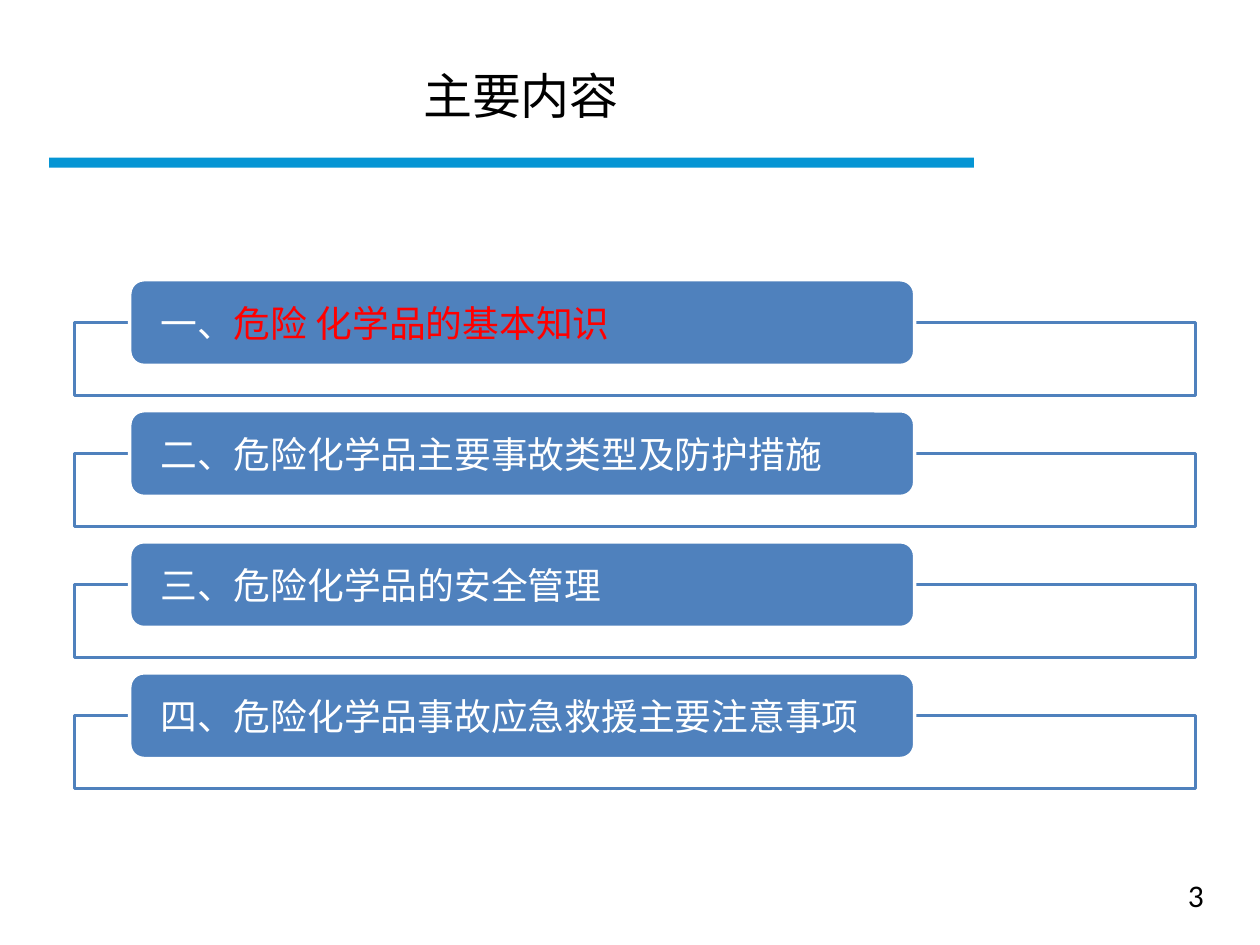
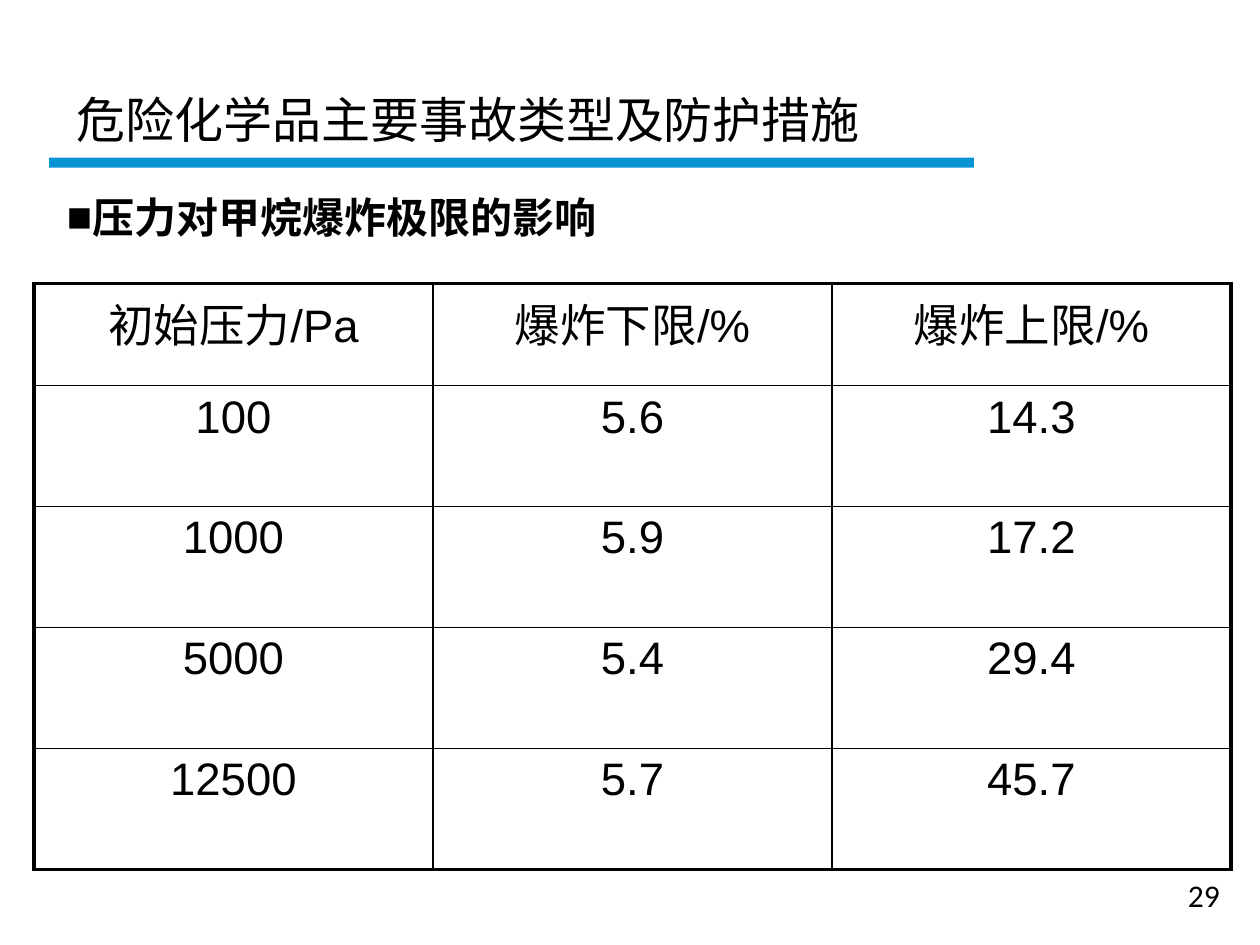
from dataclasses import dataclass

from lxml import etree
from pptx import Presentation
from pptx import util as u
from pptx.dml.color import RGBColor
from pptx.enum import shapes, text
from pptx.oxml.ns import qn


@dataclass(frozen=True)
class Theme:
    band: str = "0595D4"
    box: str = "4F81BD"
    highlight: str = "FF0000"
    ink: str = "000000"
    paper: str = "FFFFFF"
    cjk: str = "Noto Sans CJK SC"
    latin: str = "Calibri"
    table_font: str = "Arial"
    title_size: int = 28
    table_size: int = 26
    body_size: int = 24
    box_size: int = 21
    page_size: int = 18
    thin: float = 1
    thick: float = 2.25


T = Theme()

TOPICS = [
    ("一、", "危险 化学品的基本知识"),
    ("二、危险化学品主要事故类型及防护措施",),
    ("三、危险化学品的安全管理",),
    ("四、危险化学品事故应急救援主要注意事项",),
]
LIMITS = [
    ("初始压力/Pa", "爆炸下限/%", "爆炸上限/%"),
    ("100", "5.6", "14.3"),
    ("1000", "5.9", "17.2"),
    ("5000", "5.4", "29.4"),
    ("12500", "5.7", "45.7"),
]


def rgb(color):
    return RGBColor.from_string(color)


def format_run(r, size, font, color=T.ink, bold=False):
    r.font.size = u.Pt(size)
    r.font.name = font
    r.font.bold = bold
    r.font.color.rgb = rgb(color)
    etree.SubElement(r.font._element, qn("a:ea")).set("typeface", T.cjk)


def place(sp, left, top, width, height):
    sp.left, sp.top, sp.width, sp.height = map(u.Inches, (left, top, width, height))


def add_box(s, kind, at, fill, line=None):
    sp = s.shapes.add_shape(kind, *map(u.Inches, at))
    sp.shadow.inherit = False
    sp.fill.solid()
    sp.fill.fore_color.rgb = rgb(fill)
    if line:
        sp.line.color.rgb = rgb(line)
        sp.line.width = u.Pt(2)
    else:
        sp.line.fill.background()
    return sp


def add_slide(prs, layout, page):
    """Add a slide with the blue band and the page number."""
    s = prs.slides.add_slide(prs.slide_layouts[layout])
    add_box(s, shapes.MSO_SHAPE.RECTANGLE, (0.39, 1.25, 7.34, 0.08), T.band)
    tf = s.shapes.add_textbox(*map(u.Inches, (9.33, 6.9, 0.63, 0.4))).text_frame
    tf.word_wrap = True
    tf.text = str(page)
    format_run(tf.paragraphs[0].runs[0], T.page_size, T.latin)
    return s


def set_title(s, title, at, font, align, anchor):
    sp = s.shapes.title
    place(sp, *at)
    tf = sp.text_frame
    tf.text = title
    tf.vertical_anchor = anchor
    p = tf.paragraphs[0]
    p.alignment = align
    format_run(p.runs[0], T.title_size, font)


def set_bullet(s, line, at):
    sp = s.placeholders[1]
    place(sp, *at)
    sp.text_frame.text = line
    p = sp.text_frame.paragraphs[0]
    p.space_before = u.Pt(0)
    format_run(p.runs[0], T.body_size, T.cjk, bold=True)
    props = p._p.get_or_add_pPr()
    props.set("marL", "0")
    props.set("indent", "0")
    etree.SubElement(props, qn("a:buChar")).set("char", "■")


def add_topic(s, parts, top):
    """Add an outlined frame with a label on its upper edge; a second part is highlighted."""
    add_box(s, shapes.MSO_SHAPE.RECTANGLE, (0.59, top + 0.34, 8.9, 0.58), T.paper, T.box)
    label = add_box(s, shapes.MSO_SHAPE.ROUNDED_RECTANGLE,
                    (1.03, top, 6.23, 0.68), T.box, T.paper)
    tf = label.text_frame
    tf.word_wrap = True
    tf.vertical_anchor = text.MSO_ANCHOR.MIDDLE
    tf.margin_left = tf.margin_right = u.Inches(0.21)
    tf.margin_top = tf.margin_bottom = 0
    p = tf.paragraphs[0]
    p.alignment = text.PP_ALIGN.LEFT
    for part, color in zip(parts, (T.paper, T.highlight)):
        r = p.add_run()
        r.text = part
        format_run(r, T.box_size, T.latin, color)


def set_borders(cell, widths):
    """Draw the left, right, top and bottom borders in the given point widths."""
    props = cell._tc.get_or_add_tcPr()
    for side, width in zip("LRTB", widths):
        ln = etree.SubElement(props, qn(f"a:ln{side}"), w=str(u.Pt(width)))
        fill = etree.SubElement(ln, qn("a:solidFill"))
        etree.SubElement(fill, qn("a:srgbClr"), val=T.ink)


def add_limits_table(s, rows, at, header_height, row_height):
    last_row, last_col = len(rows) - 1, len(rows[0]) - 1
    table = s.shapes.add_table(len(rows), len(rows[0]), *map(u.Inches, at)).table
    table.first_row = table.horz_banding = False
    for i, values in enumerate(rows):
        table.rows[i].height = u.Inches(row_height if i else header_height)
        for j, value in enumerate(values):
            cell = table.cell(i, j)
            outer = (j == 0, j == last_col, i == 0, i == last_row)
            set_borders(cell, [T.thick if edge else T.thin for edge in outer])
            cell.fill.background()
            cell.text = value
            p = cell.text_frame.paragraphs[0]
            p.alignment = text.PP_ALIGN.CENTER
            format_run(p.runs[0], T.table_size, T.table_font)


def build_contents(prs):
    s = add_slide(prs, 5, 3)
    set_title(s, "主要内容", (0.16, 0.16, 7.95, 1.18), T.cjk,
              text.PP_ALIGN.CENTER, text.MSO_ANCHOR.MIDDLE)
    for i, parts in enumerate(TOPICS):
        add_topic(s, parts, 2.22 + 1.04 * i)


def build_limits(prs):
    s = add_slide(prs, 1, 29)
    set_title(s, "危险化学品主要事故类型及防护措施", (0.51, 0.66, 7.16, 0.57), T.table_font,
              text.PP_ALIGN.LEFT, text.MSO_ANCHOR.TOP)
    set_bullet(s, "压力对甲烷爆炸极限的影响", (0.43, 1.47, 9, 0.63))
    add_limits_table(s, LIMITS, (0.27, 2.25, 9.5, 4.66), 0.81, 0.96)


def main():
    prs = Presentation()
    prs.slide_width, prs.slide_height = u.Inches(10), u.Inches(7.5)
    build_contents(prs)
    build_limits(prs)
    prs.save("out.pptx")


if __name__ == "__main__":
    main()
